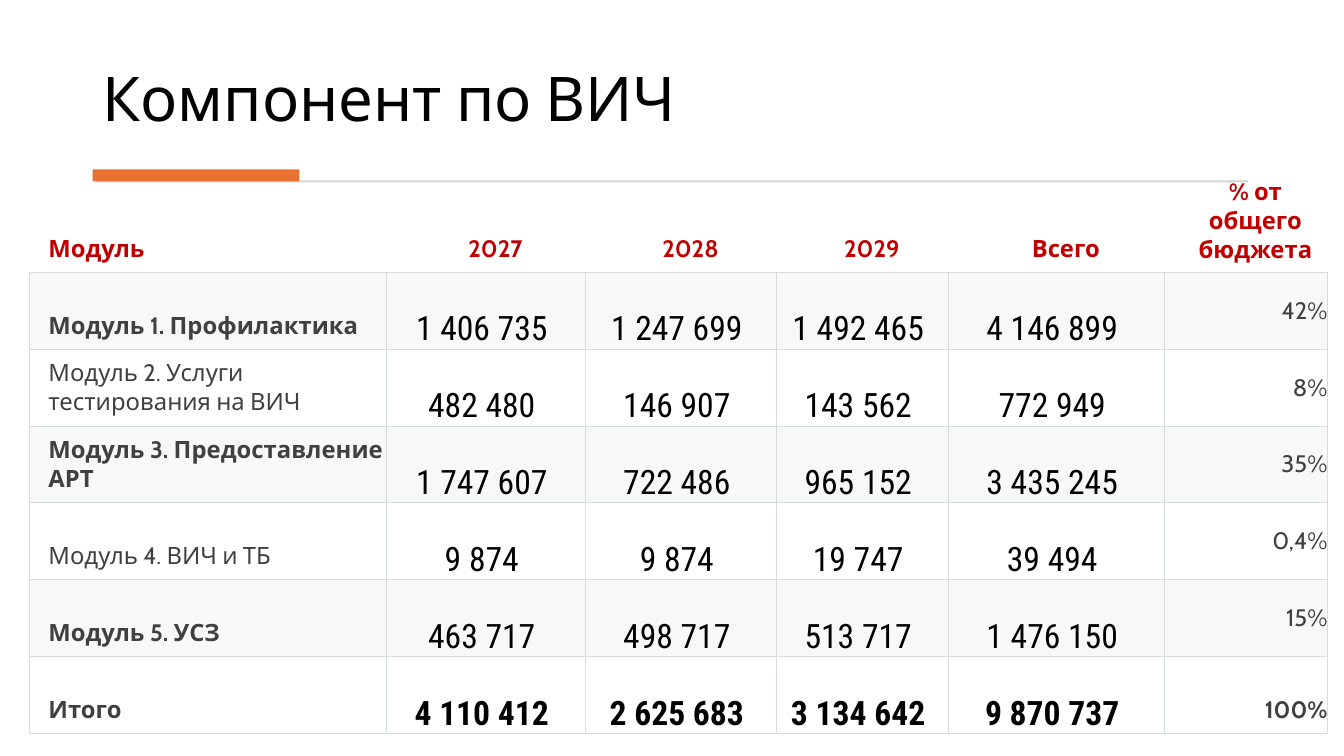
import dataclasses

import lxml.etree
import pptx
import pptx.dml.color
import pptx.enum.shapes
import pptx.enum.text
import pptx.oxml.ns
import pptx.util

Pt = pptx.util.Pt
RGB = pptx.dml.color.RGBColor.from_string
qn = pptx.oxml.ns.qn
ALIGN = pptx.enum.text.PP_ALIGN
ANCHOR = pptx.enum.text.MSO_ANCHOR


@dataclasses.dataclass(frozen=True)
class Theme:
    font: str = "Cabin"
    number_font: str = "Roboto Condensed"
    black: str = "000000"
    gray: str = "404040"
    red: str = "C00000"
    orange: str = "E97132"
    rule: str = "D5D5D5"
    border: str = "D8DCDC"
    band: str = "D8DEDC"
    band_alpha: int = 20000
    border_width: float = 0.75
    title_size: int = 44
    number_size: int = 24
    label_size: int = 17


HEADER = ["Модуль", "2027", "2028", "2029", "Всего", "% от общего бюджета"]
MODULES = [
    ["Модуль 1. Профилактика", "1 406 735", "1 247 699", "1 492 465", "4 146 899", "42%"],
    ["Модуль 2. Услуги тестирования на ВИЧ", "482 480", "146 907", "143 562", "772 949", "8%"],
    ["Модуль 3. Предоставление АРТ", "1 747 607", "722 486", "965 152", "3 435 245", "35%"],
    ["Модуль 4. ВИЧ и ТБ", "9 874", "9 874", "19 747", "39 494", "0,4%"],
    ["Модуль 5. УСЗ", "463 717", "498 717", "513 717", "1 476 150", "15%"],
]
TOTAL = ["Итого", "4 110 412", "2 625 683", "3 134 642", "9 870 737", "100%"]
COLUMN_WIDTHS = [254.88, 142.56, 136.08, 123.12, 154.08, 116.64]
ROW_HEIGHT = 54.93
LABEL_INSETS = (13.7, 6.5, 0, 6.5)
NUMBER_INSETS = (0.7, 0.7, 6.5, 0)


class SlideBuilder:
    def __init__(self, s, theme):
        self.s = s
        self.theme = theme

    def add_text(self, p, text, align=ALIGN.LEFT, **formats):
        p.alignment = align
        r = p.add_run()
        r.text = text
        color = formats.pop("color")
        for name, value in formats.items():
            setattr(r.font, name, value)
        r.font.color.rgb = RGB(color)

    def title(self, text, left, top, width, height):
        t = self.theme
        tf = self.s.shapes.add_textbox(Pt(left), Pt(top), Pt(width), Pt(height)).text_frame
        tf.word_wrap = True
        tf.vertical_anchor = ANCHOR.BOTTOM
        p = tf.paragraphs[0]
        p.line_spacing = 0.9
        self.add_text(p, text, name=t.font, size=Pt(t.title_size), color=t.black)

    def bar(self, left, top, width, height, color):
        sp = self.s.shapes.add_shape(
            pptx.enum.shapes.MSO_SHAPE.RECTANGLE, Pt(left), Pt(top), Pt(width), Pt(height))
        sp.shadow.inherit = False
        sp.fill.solid()
        sp.fill.fore_color.rgb = RGB(color)
        sp.line.fill.background()

    def borders(self, cell, colors):
        tc_pr = cell._tc.get_or_add_tcPr()
        for side, color in zip("LRTB", colors):
            ln = lxml.etree.SubElement(
                tc_pr, qn(f"a:ln{side}"), w=str(Pt(self.theme.border_width)))
            if color is None:
                lxml.etree.SubElement(ln, qn("a:noFill"))
            else:
                fill = lxml.etree.SubElement(ln, qn("a:solidFill"))
                lxml.etree.SubElement(fill, qn("a:srgbClr"), val=color)

    def cell_fill(self, cell, banded):
        if not banded:
            cell.fill.background()
            return
        cell.fill.solid()
        cell.fill.fore_color.rgb = RGB(self.theme.band)
        color = cell._tc.tcPr.find(f"{qn('a:solidFill')}/{qn('a:srgbClr')}")
        lxml.etree.SubElement(color, qn("a:alpha"), val=str(self.theme.band_alpha))

    def cell(self, cell, text, insets, anchor, align, **formats):
        sides = ("margin_left", "margin_top", "margin_right", "margin_bottom")
        for side, inset in zip(sides, insets):
            setattr(cell, side, Pt(inset))
        cell.vertical_anchor = anchor
        self.add_text(cell.text_frame.paragraphs[0], text, align, **formats)

    def budget_table(self, left, top, header, modules, total):
        t = self.theme
        rows = [header, *modules, total]
        last_row, last_column = len(rows) - 1, len(header) - 1
        table = self.s.shapes.add_table(
            len(rows), len(header), Pt(left), Pt(top),
            Pt(sum(COLUMN_WIDTHS)), Pt(ROW_HEIGHT * len(rows))).table
        table.first_row = table.horz_banding = False
        for column, width in zip(table.columns, COLUMN_WIDTHS):
            column.width = Pt(width)
        label = dict(name=t.font, size=Pt(t.label_size), color=t.gray)
        number = dict(name=t.number_font, size=Pt(t.number_size), color=t.black)
        for i, values in enumerate(rows):
            table.rows[i].height = Pt(ROW_HEIGHT)
            is_header, is_total, banded = i == 0, i == last_row, i % 2 == 1
            for j, text in enumerate(values):
                cell = table.cell(i, j)
                edge = None if is_header else t.border if banded else t.band
                upper = None if is_header else t.border
                self.borders(cell, (edge, edge, upper, t.band if is_total else t.border))
                self.cell_fill(cell, banded)
                insets, anchor, align = LABEL_INSETS, ANCHOR.BOTTOM, ALIGN.CENTER
                formats = dict(label, bold=is_header or is_total)
                if is_header:
                    formats["color"] = t.red
                    align = ALIGN.CENTER if j else ALIGN.LEFT
                elif j == 0:
                    align = ALIGN.LEFT
                    formats["bold"] = banded or is_total
                elif j == last_column:
                    align = ALIGN.RIGHT
                    anchor = ANCHOR.BOTTOM if is_total else ANCHOR.MIDDLE
                else:
                    insets = NUMBER_INSETS
                    formats.update(number)
                self.cell(cell, text, insets, anchor, align, **formats)


def main():
    prs = pptx.Presentation()
    prs.slide_width, prs.slide_height = Pt(960), Pt(540)
    theme = Theme()
    slide = SlideBuilder(prs.slides.add_slide(prs.slide_layouts[6]), theme)
    slide.title("Компонент по ВИЧ", 66.24, 20.16, 827.28, 79.92)
    slide.bar(68.4, 128.88, 822.96, 1.44, theme.rule)
    slide.bar(66.24, 121, 147.6, 8.64, theme.orange)
    slide.budget_table(20.9, 120.24, HEADER, MODULES, TOTAL)
    prs.save("out.pptx")


if __name__ == "__main__":
    main()
